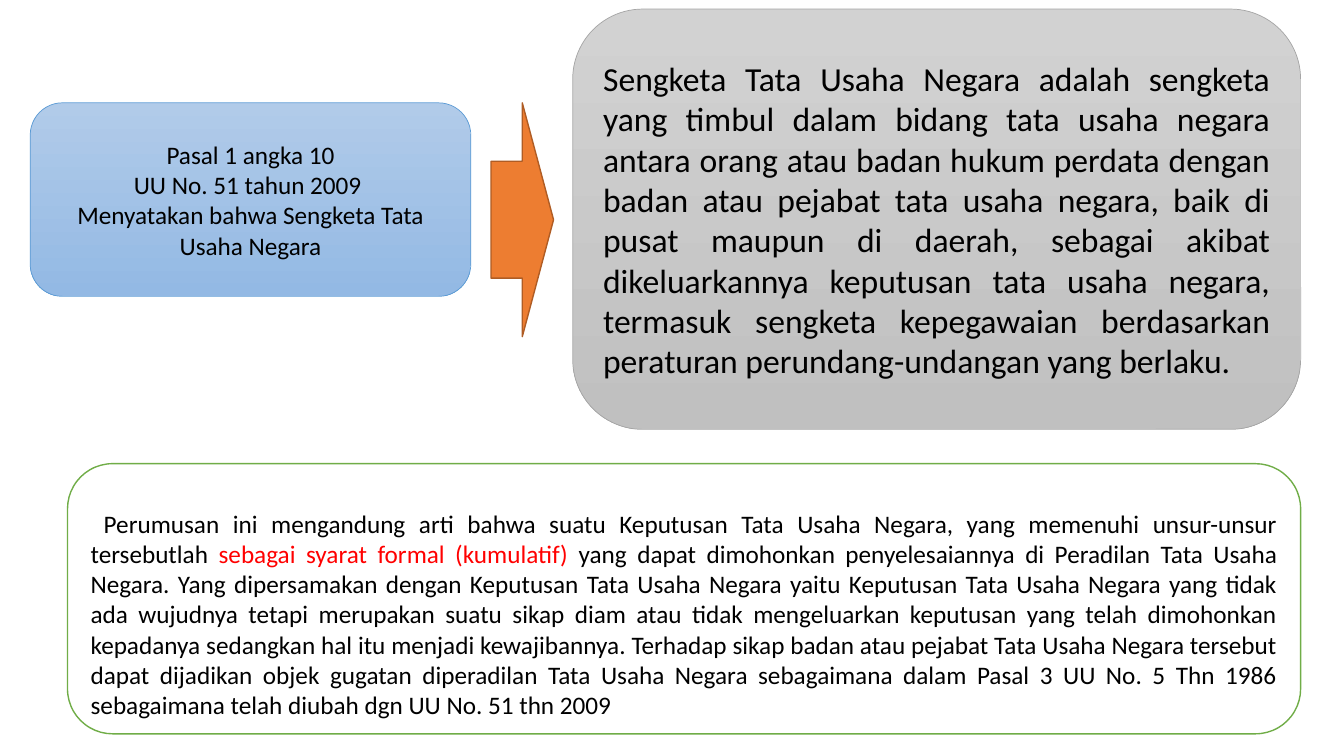
from pptx import Presentation
from pptx import util as u
from pptx.dml.color import RGBColor
from pptx.enum import shapes, text

BLACK = RGBColor(0x00, 0x00, 0x00)
WHITE = RGBColor(0xFF, 0xFF, 0xFF)
RED = RGBColor(0xFF, 0x00, 0x00)
BLUE = RGBColor(0x5B, 0x9B, 0xD5)
BLUE_TOP = RGBColor(0xB1, 0xCB, 0xE9)
BLUE_BOTTOM = RGBColor(0x93, 0xB9, 0xE4)
GREY = RGBColor(0xA5, 0xA5, 0xA5)
GREY_TOP = RGBColor(0xD2, 0xD2, 0xD2)
GREY_BOTTOM = RGBColor(0xC0, 0xC0, 0xC0)
ORANGE = RGBColor(0xED, 0x7D, 0x31)
ORANGE_DARK = RGBColor(0xAF, 0x5C, 0x24)
GREEN = RGBColor(0x70, 0xAD, 0x47)

SOURCE = [
    [("Pasal 1 angka 10", BLACK)],
    [("UU No. 51 tahun 2009 ", BLACK)],
    [("Menyatakan bahwa Sengketa Tata Usaha Negara", BLACK)],
]
DEFINITION = [[(
    "Sengketa Tata Usaha Negara adalah sengketa yang timbul dalam bidang tata usaha negara "
    "antara orang atau badan hukum perdata dengan badan atau pejabat tata usaha negara, baik "
    "di pusat maupun di daerah, sebagai akibat dikeluarkannya keputusan tata usaha negara, "
    "termasuk sengketa kepegawaian berdasarkan peraturan perundang-undangan yang berlaku.", BLACK)]]
MEANING = [[
    ("Perumusan ini mengandung arti bahwa suatu Keputusan Tata Usaha Negara, yang memenuhi "
     "unsur-unsur tersebutlah ", BLACK),
    ("sebagai syarat formal (kumulatif) ", RED),
    ("yang dapat dimohonkan penyelesaiannya di Peradilan Tata Usaha Negara. Yang dipersamakan "
     "dengan Keputusan Tata Usaha Negara yaitu Keputusan Tata Usaha Negara yang tidak ada "
     "wujudnya tetapi merupakan suatu sikap diam atau tidak mengeluarkan keputusan yang telah "
     "dimohonkan kepadanya sedangkan hal itu menjadi kewajibannya. Terhadap sikap badan atau "
     "pejabat Tata Usaha Negara tersebut dapat dijadikan objek gugatan diperadilan Tata Usaha "
     "Negara sebagaimana dalam Pasal 3 UU No. 5 Thn 1986 sebagaimana telah diubah dgn UU No. 51 "
     "thn 2009", BLACK),
]]


def add_block(s, kind, box, fills, line, width):
    sp = s.shapes.add_shape(kind, *map(u.Inches, box))
    sp.shadow.inherit = False
    if len(fills) == 1:
        sp.fill.solid()
        sp.fill.fore_color.rgb = fills[0]
    else:
        sp.fill.gradient()
        sp.fill.gradient_angle = 270
        for stop, color in zip(sp.fill.gradient_stops, fills):
            stop.color.rgb = color
    sp.line.color.rgb = line
    sp.line.width = u.Pt(width)
    return sp


def write(sp, paragraphs, size, align, indent=0, top=0.05):
    tf = sp.text_frame
    frame = {"word_wrap": True, "vertical_anchor": text.MSO_ANCHOR.MIDDLE,
             "margin_top": u.Inches(top)}
    for name, value in frame.items():
        setattr(tf, name, value)
    for i, runs in enumerate(paragraphs):
        p = tf.add_paragraph() if i else tf.paragraphs[0]
        p.alignment = align
        if indent:
            p._p.get_or_add_pPr().set("indent", str(u.Inches(indent)))
        for words, color in runs:
            r = p.add_run()
            r.text = words
            for name, value in {"name": "Calibri", "size": u.Pt(size)}.items():
                setattr(r.font, name, value)
            r.font.color.rgb = color


def main():
    """Build the slide on the definition of a state administrative dispute."""
    prs = Presentation()
    prs.slide_width, prs.slide_height = u.Inches(13.33), u.Inches(7.5)
    s = prs.slides.add_slide(prs.slide_layouts[6])
    kind, align = shapes.MSO_SHAPE, text.PP_ALIGN

    source = add_block(s, kind.ROUNDED_RECTANGLE, (0.3, 1.02, 4.37, 1.92),
                       (BLUE_TOP, BLUE_BOTTOM), BLUE, 0.5)
    write(source, SOURCE, 18, align.CENTER)
    definition = add_block(s, kind.ROUNDED_RECTANGLE, (5.68, 0.09, 7.22, 4.17),
                           (GREY_TOP, GREY_BOTTOM), GREY, 0.5)
    write(definition, DEFINITION, 24, align.JUSTIFY)
    add_block(s, kind.RIGHT_ARROW, (4.87, 1.02, 0.62, 2.32), (ORANGE,), ORANGE_DARK, 1)
    meaning = add_block(s, kind.ROUNDED_RECTANGLE, (0.67, 4.6, 12.23, 2.68), (WHITE,), GREEN, 1)
    write(meaning, MEANING, 18, align.JUSTIFY, indent=0.13, top=0.35)

    prs.save("out.pptx")


if __name__ == "__main__":
    main()
